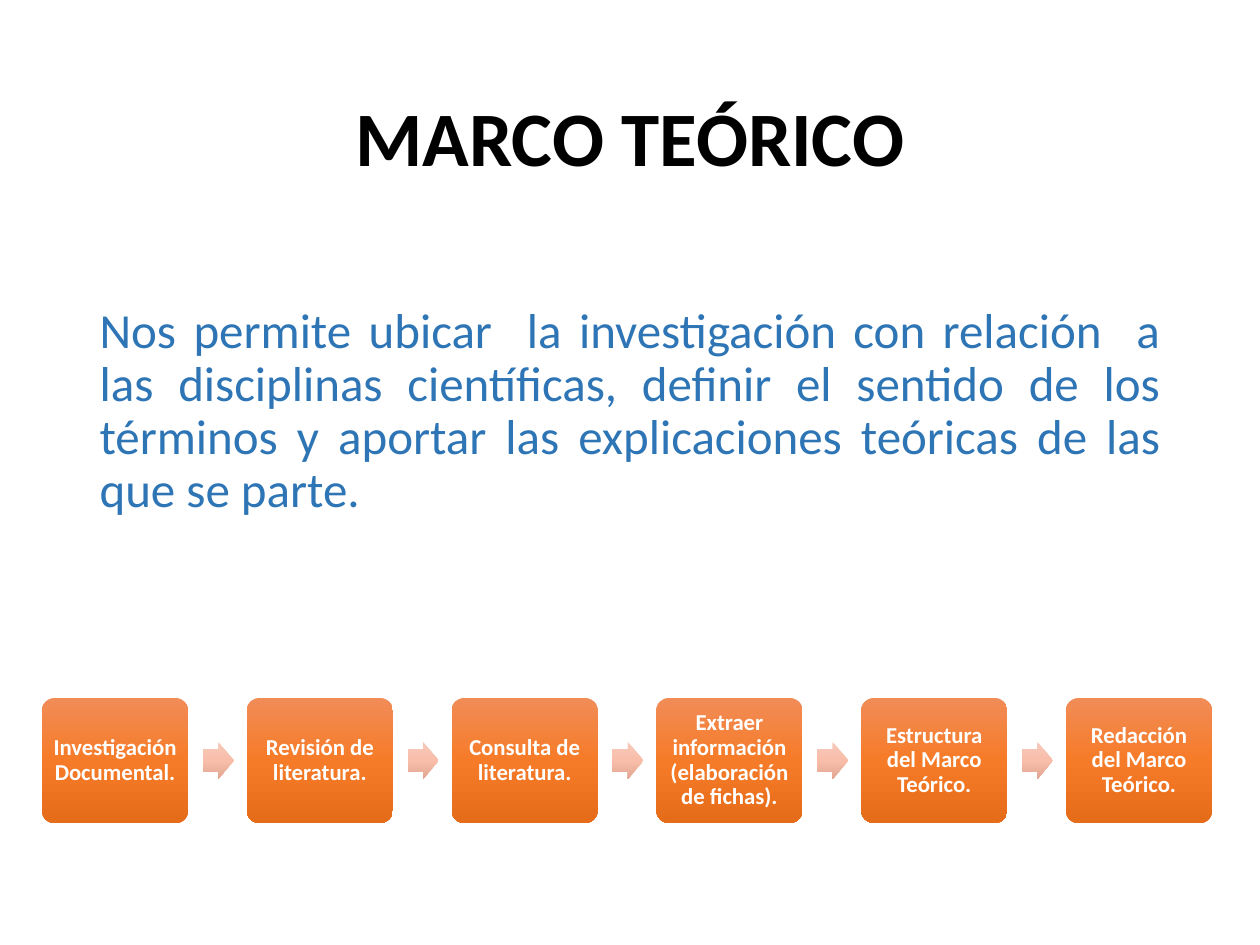
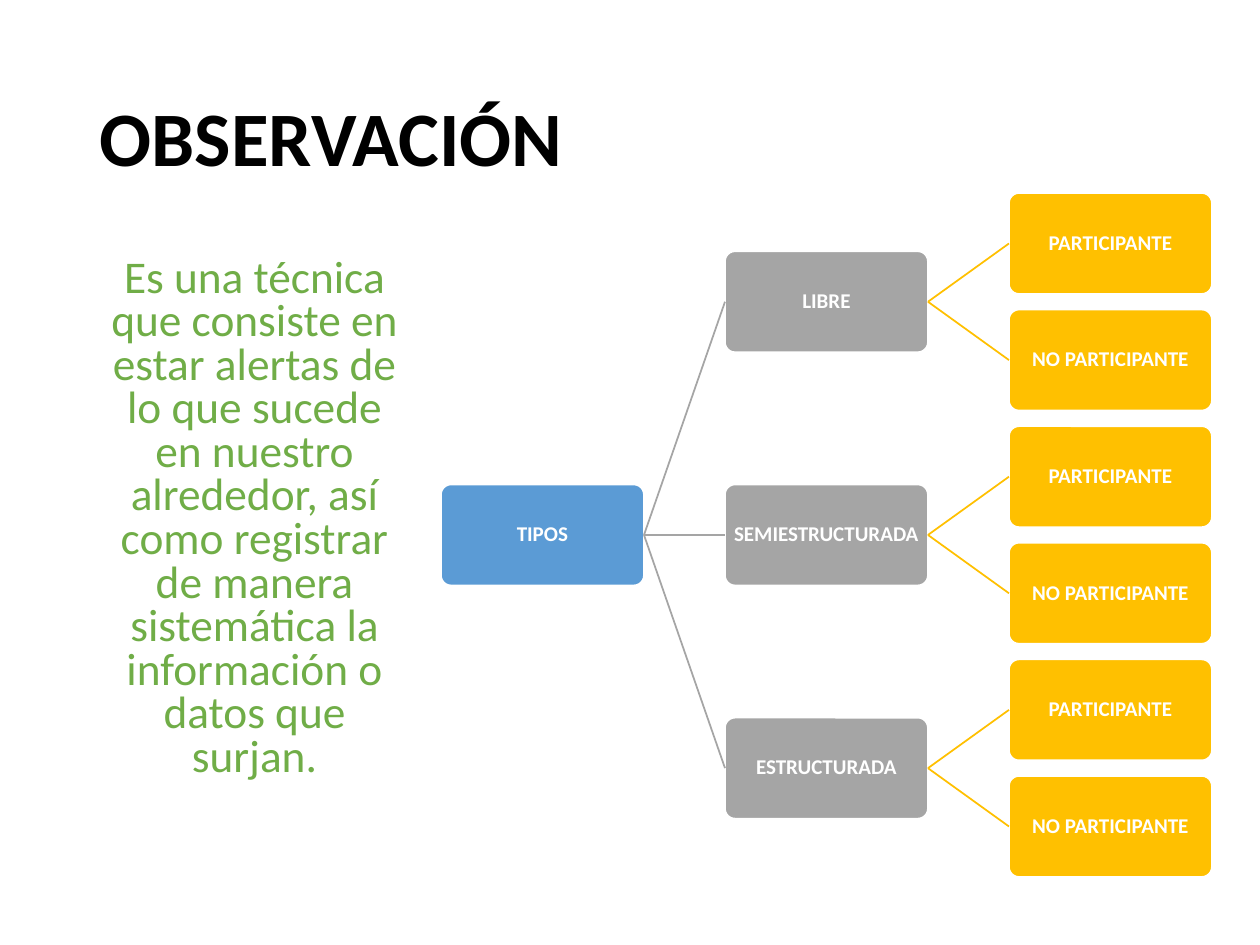
from copy import deepcopy

from pptx import Presentation
from pptx.dml.color import RGBColor as RGB
from pptx.enum.shapes import MSO_CONNECTOR as LINK, MSO_SHAPE as SHAPE
from pptx.enum.text import MSO_ANCHOR as ANCHOR, MSO_AUTO_SIZE as FIT, PP_ALIGN as ALIGN
from pptx.oxml.ns import qn
from pptx.util import Emu, Pt
from lxml.etree import SubElement

FONT = "Calibri"
BLACK = RGB(0x00, 0x00, 0x00)
WHITE = RGB(0xFF, 0xFF, 0xFF)
NAVY = RGB(0x2E, 0x75, 0xB6)
GREEN = RGB(0x70, 0xAD, 0x47)
BLUE = RGB(0x5B, 0x9B, 0xD5)
GRAY = RGB(0xA5, 0xA5, 0xA5)
GOLD = RGB(0xFF, 0xC0, 0x00)
STEP = (RGB(0xF1, 0x8C, 0x57), RGB(0xF6, 0x7B, 0x28), RGB(0xE5, 0x6C, 0x19))
ARROW = (RGB(0xF7, 0xC9, 0xBA), RGB(0xF8, 0xBE, 0xAA), RGB(0xE2, 0xA6, 0x92))

TITLE = (87, 50, 1086, 183)
STEPS = ("Investigación Documental.", "Revisión de literatura.",
         "Consulta de literatura.", "Extraer información (elaboración de fichas).",
         "Estructura del Marco Teórico.", "Redacción del Marco Teórico.")
KINDS = ("LIBRE", "SEMIESTRUCTURADA", "ESTRUCTURADA")
ROLES = ("PARTICIPANTE", "NO PARTICIPANTE")


def px(num):
    """Turn pixels into EMU."""
    return Emu(round(num * 914400 / 126))


def place(shape, box):
    """Move a shape to a box given in pixels."""
    shape.left, shape.top, shape.width, shape.height = map(px, box)


def write(shape, text, size, color, bold=False, align=ALIGN.CENTER, gap=0.9):
    """Put one formatted paragraph in a shape."""
    frame = shape.text_frame
    frame.text = text
    frame.word_wrap = True
    frame.auto_size = FIT.NONE
    para = frame.paragraphs[0]
    para.alignment = align
    para.line_spacing = gap
    font = para.runs[0].font
    font.name, font.size, font.bold = FONT, Pt(size), bold
    font.color.rgb = color
    return para


def head(slide, text, align):
    """Fill the title placeholder."""
    title = slide.shapes.title
    place(title, TITLE)
    write(title, text, 44, BLACK, True, align)
    title.text_frame.vertical_anchor = ANCHOR.MIDDLE


def body(slide, box, text, size, color, align, gap):
    """Fill the body placeholder with a paragraph that has no bullet."""
    hold = slide.placeholders[1]
    place(hold, box)
    para = write(hold, text, size, color, False, align, gap)
    para.space_before = Pt(10)
    props = para._p.get_or_add_pPr()
    props.set("marL", "0")
    props.set("indent", "0")
    SubElement(props, qn("a:buNone"))


def block(slide, kind, box, *ratios):
    """Add a preset shape with no shadow."""
    shape = slide.shapes.add_shape(kind, *map(px, box))
    shape.shadow.inherit = False
    for i, ratio in enumerate(ratios):
        shape.adjustments[i] = ratio
    return shape


def shade(shape, colors):
    """Fill a shape from top to bottom with three even stops."""
    shape.line.fill.background()
    fill = shape.fill
    fill.gradient()
    fill.gradient_angle = 270
    stops = shape._element.spPr.find(qn("a:gradFill")).find(qn("a:gsLst"))
    stops.append(deepcopy(stops[0]))
    for i, (stop, color) in enumerate(zip(fill.gradient_stops, colors)):
        stop.position = i / 2
        stop.color.rgb = color


def label(shape, text, size, pad):
    """Write a bold white label with even margins."""
    write(shape, text, size, WHITE, True)
    frame = shape.text_frame
    frame.vertical_anchor = ANCHOR.MIDDLE
    frame.margin_left = frame.margin_right = px(pad)
    frame.margin_top = frame.margin_bottom = px(pad)


def flow(slide, box):
    """Draw the row of steps with arrows between them."""
    left, top, width, high = box
    wide = 146
    pitch = (width - wide) / (len(STEPS) - 1)
    for i, text in enumerate(STEPS):
        x = left + i * pitch
        step = block(slide, SHAPE.ROUNDED_RECTANGLE, (x, top, wide, high), 0.1)
        shade(step, STEP)
        label(step, text, 13, 5)
        if i:
            spot = (x - 44, top + (high - 37) / 2, 31, 37)
            shade(block(slide, SHAPE.RIGHT_ARROW, spot, 0.6, 0.5), ARROW)


def node(slide, box, text, color):
    """Add one box of the tree."""
    shape = block(slide, SHAPE.ROUNDED_RECTANGLE, box, 0.1)
    shape.fill.solid()
    shape.fill.fore_color.rgb = color
    shape.line.color.rgb = WHITE
    shape.line.width = Pt(1)
    label(shape, text, 12, 2)
    return shape


def link(slide, start, end, color):
    """Join the right side of one box to the left side of another."""
    line = slide.shapes.add_connector(LINK.STRAIGHT, 0, 0, 0, 0)
    line.begin_connect(start, 3)
    line.end_connect(end, 1)
    line.line.color.rgb = color
    line.line.width = Pt(1)
    SubElement(line._element.spPr, qn("a:effectLst"))


def tree(slide, box):
    """Draw the root, its kinds and their roles from left to right."""
    left, top, width, height = box
    wide, high = 203, 101
    cols = [left + i * (width - wide) / 2 for i in range(3)]
    pitch = (height - high) / (len(KINDS) * len(ROLES) - 1)
    root = node(slide, (cols[0], top + (height - high) / 2, wide, high), "TIPOS", BLUE)
    for i, kind in enumerate(KINDS):
        first = top + i * len(ROLES) * pitch
        mid = node(slide, (cols[1], first + pitch / 2, wide, high), kind, GRAY)
        link(slide, root, mid, GRAY)
        for j, role in enumerate(ROLES):
            leaf = node(slide, (cols[2], first + j * pitch, wide, high), role, GOLD)
            link(slide, mid, leaf, GOLD)


def theory(slide):
    """Build the slide on the theoretical framework."""
    head(slide, "MARCO TEÓRICO", ALIGN.CENTER)
    body(slide, (87, 300, 1086, 316),
         "Nos permite ubicar  la investigación con relación  a las disciplinas "
         "científicas, definir el sentido de los términos y aportar las "
         "explicaciones teóricas de las que se parte.",
         28, NAVY, ALIGN.JUSTIFY, 0.9)
    flow(slide, (42, 698, 1170, 125))


def watch(slide):
    """Build the slide on observation."""
    head(slide, "OBSERVACIÓN", ALIGN.LEFT)
    body(slide, (87, 252, 335, 582),
         "Es una técnica que consiste en estar alertas de lo que sucede en "
         "nuestro alrededor, así como registrar de manera sistemática la "
         "información o datos que surjan.",
         25.9, GREEN, ALIGN.CENTER, 0.8)
    tree(slide, (441, 193, 771, 684))


def main():
    """Build and save the deck."""
    deck = Presentation()
    deck.slide_width, deck.slide_height = px(1260), px(945)
    for build in (theory, watch):
        build(deck.slides.add_slide(deck.slide_layouts[1]))
    deck.save("out.pptx")


if __name__ == "__main__":
    main()
